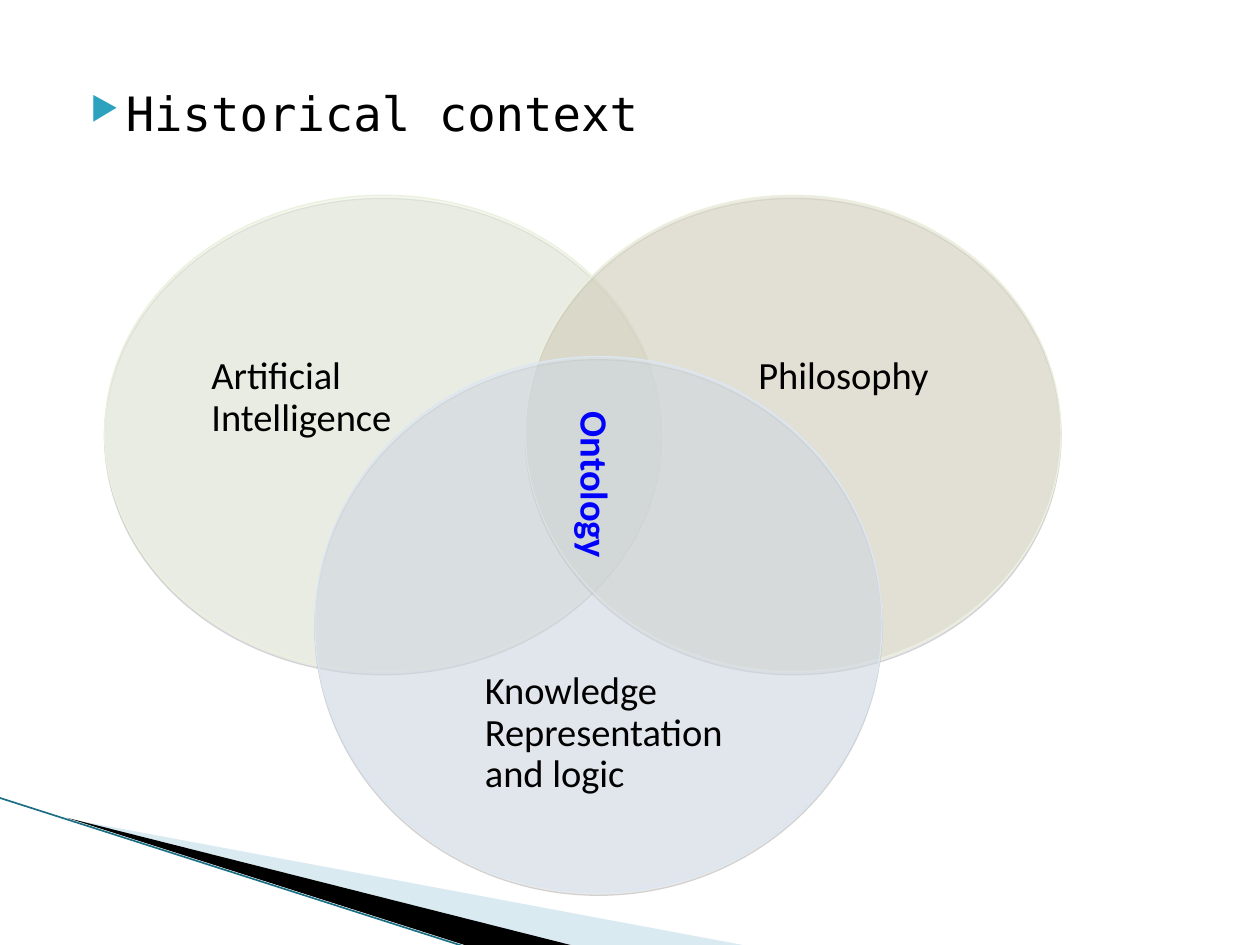
from typing import NamedTuple

from lxml import etree
from pptx import Presentation
from pptx.dml.color import RGBColor
from pptx.enum.shapes import MSO_CONNECTOR, MSO_SHAPE
from pptx.oxml import parse_xml
from pptx.oxml.ns import nsdecls, qn
from pptx.util import Inches, Pt

STRAIGHT = MSO_CONNECTOR.STRAIGHT
OVAL = MSO_SHAPE.OVAL

BLACK = RGBColor(0x00, 0x00, 0x00)
BLUE = RGBColor(0x00, 0x00, 0xFF)
TEAL = RGBColor(0x1B, 0x6F, 0x85)
PALE_TEAL = RGBColor(0xA0, 0xCB, 0xDC)
PALE_GREEN = RGBColor(0xEB, 0xF1, 0xDE)
PALE_TAN = RGBColor(0xDD, 0xD9, 0xC3)
PALE_BLUE = RGBColor(0xDC, 0xE6, 0xF2)

LABEL_INDENT = Inches(0.5)
TITLE_INDENT = Inches(0.4)
TITLE_HANGING = Inches(-0.28)


class Circle(NamedTuple):
    left: float
    top: float
    width: float
    height: float
    fill: RGBColor
    line: RGBColor


class Label(NamedTuple):
    text: str
    left: float
    top: float
    width: float
    height: float
    color: RGBColor = BLACK
    bold: bool = False
    rotation: float = 0


class Wedge(NamedTuple):
    points: list[tuple[float, float]]
    fill: RGBColor
    opacity: int = 100


WEDGES = [
    Wedge([(0.55, 6.5), (5.95, 7.51), (4.56, 7.51)], PALE_TEAL, 40),
    Wedge([(0.53, 6.49), (4.57, 7.51), (3.72, 7.51)], BLACK),
]
CIRCLES = [
    Circle(0.83, 1.55, 4.42, 3.78, PALE_GREEN, PALE_GREEN),
    Circle(4.17, 1.55, 4.25, 3.78, PALE_TAN, PALE_GREEN),
    Circle(2.5, 2.83, 4.5, 4.25, PALE_BLUE, PALE_BLUE),
]
LABELS = [
    Label("Philosophy", 5.42, 2.78, 2.58, 0.44),
    Label("Knowledge Representation and logic", 3.25, 5.28, 2.83, 1.11),
    Label("Artificial Intelligence", 1.08, 2.78, 2.58, 0.78),
    Label("Ontology", 3.74, 3.41, 1.92, 0.44, BLUE, True, 90),
]


def fill_shape(shape, color: RGBColor, opacity: int) -> None:
    """Fill a shape with a colour at an opacity in percent."""
    shape.fill.solid()
    shape.fill.fore_color.rgb = color
    if opacity < 100:
        color_element = shape.fill._xPr.find(qn("a:solidFill"))[0]
        etree.SubElement(color_element, qn("a:alpha"), val=str(opacity * 1000))


def add_wedge(slide, wedge: Wedge) -> None:
    start, *others = [(Inches(x), Inches(y)) for x, y in wedge.points]
    builder = slide.shapes.build_freeform(*start)
    builder.add_line_segments(others)
    shape = builder.convert_to_shape()
    shape.shadow.inherit = False
    fill_shape(shape, wedge.fill, wedge.opacity)
    shape.line.fill.background()


def add_edge_line(slide) -> None:
    line = slide.shapes.add_connector(
        STRAIGHT, Inches(-0.01), Inches(6.33), Inches(3.71), Inches(7.52))
    line.line.color.rgb = TEAL
    line.line.width = Pt(0.95)
    etree.SubElement(line._element.spPr, qn("a:effectLst"))


def add_circle(slide, circle: Circle) -> None:
    shape = slide.shapes.add_shape(OVAL, *map(Inches, circle[:4]))
    fill_shape(shape, circle.fill, 51)
    shape.line.color.rgb = circle.line
    shape.line.width = Pt(0.75)
    shape.shadow.inherit = False
    shape._element.spPr.find(qn("a:effectLst")).append(parse_xml(
        f'<a:outerShdw {nsdecls("a")} blurRad="0" dist="{Pt(1.8)}" dir="5400000" rotWithShape="0">'
        '<a:srgbClr val="808080"><a:alpha val="35000"/></a:srgbClr></a:outerShdw>'))


def add_title(slide) -> None:
    box = slide.shapes.add_textbox(Inches(0.5), Inches(0.62), Inches(9), Inches(0.59))
    box.text_frame.word_wrap = True
    paragraph = box.text_frame.paragraphs[0]
    paragraph.text = "Historical context"
    properties = paragraph._p.get_or_add_pPr()
    properties.set("marL", str(TITLE_INDENT))
    properties.set("indent", str(TITLE_HANGING))
    bullet_color = etree.SubElement(properties, qn("a:buClr"))
    etree.SubElement(bullet_color, qn("a:srgbClr"), val="2DA2BF")
    etree.SubElement(properties, qn("a:buSzPct"), val="68000")
    etree.SubElement(properties, qn("a:buChar"), char="▶")
    paragraph.font.name = "DejaVu Sans Mono"
    paragraph.font.size = Pt(27)
    paragraph.font.color.rgb = BLACK


def add_label(slide, label: Label) -> None:
    box = slide.shapes.add_textbox(*map(Inches, label[1:5]))
    box.rotation = label.rotation
    box.text_frame.word_wrap = True
    paragraph = box.text_frame.paragraphs[0]
    paragraph.text = label.text
    paragraph.line_spacing = 0.9
    paragraph._p.get_or_add_pPr().set("marL", str(LABEL_INDENT))
    paragraph.font.name = "Calibri"
    paragraph.font.size = Pt(22)
    paragraph.font.bold = label.bold
    paragraph.font.color.rgb = label.color


def main() -> None:
    presentation = Presentation()
    presentation.slide_width = Inches(10)
    presentation.slide_height = Inches(7.5)
    slide = presentation.slides.add_slide(presentation.slide_layouts[6])
    for wedge in WEDGES:
        add_wedge(slide, wedge)
    add_edge_line(slide)
    add_title(slide)
    for circle in CIRCLES:
        add_circle(slide, circle)
    for label in LABELS:
        add_label(slide, label)
    presentation.save("out.pptx")


if __name__ == "__main__":
    main()
